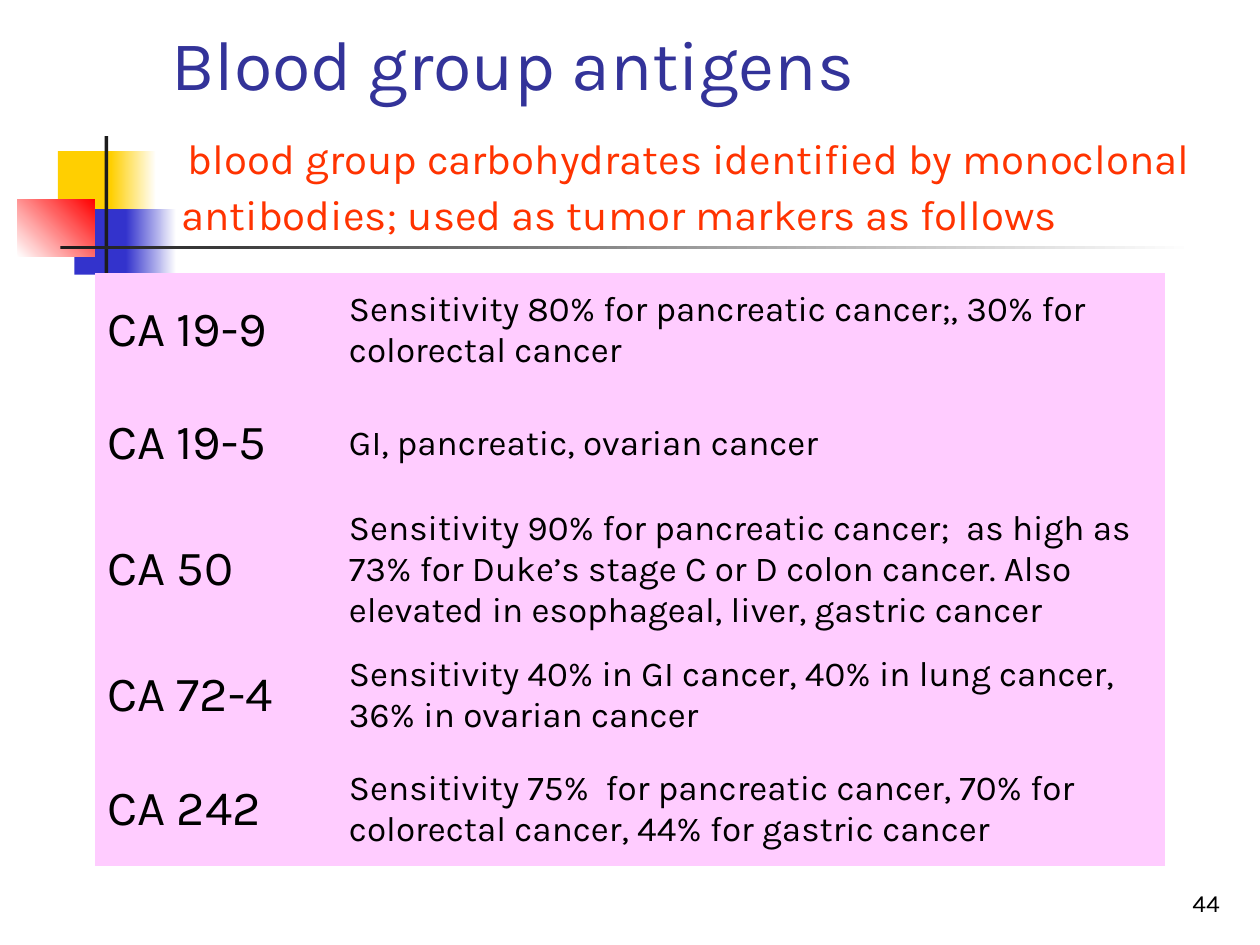
from pptx import Presentation
from pptx.dml.color import RGBColor
from pptx.enum.shapes import MSO_SHAPE as Shape
from pptx.enum.text import MSO_ANCHOR as Anchor, MSO_AUTO_SIZE as AutoSize, PP_ALIGN as Align
from pptx.oxml.ns import qn
from pptx.util import Inches, Pt

FONT = "Karla"
WHITE = RGBColor(0xFF, 0xFF, 0xFF)
BLACK = RGBColor(0, 0, 0)
CHARCOAL = RGBColor(0x1C, 0x1C, 0x1C)
YELLOW = RGBColor(0xFF, 0xCF, 0x01)
BLUE = RGBColor(0x33, 0x33, 0xCC)
RED = RGBColor(0xFF, 0, 0)
INDIGO = RGBColor(0x33, 0x33, 0x99)
ORANGE = RGBColor(0xFF, 0x33, 0)
PINK = RGBColor(0xFF, 0xCC, 0xFF)

NO_STYLE = "{2D5ABB26-0587-4C30-8999-92F81FD0307C}"
COLUMN_WIDTHS = (1.92, 6.58)
ROW_HEIGHT = 0.9
MARKERS = [
    ("CA 19-9", "Sensitivity 80% for pancreatic cancer;, 30% for colorectal cancer"),
    ("CA 19-5", "GI, pancreatic, ovarian cancer"),
    ("CA 50", "Sensitivity 90% for pancreatic cancer;  as high as 73% for Duke’s stage C or D "
              "colon cancer. Also elevated in esophageal, liver, gastric cancer"),
    ("CA 72-4", "Sensitivity 40% in GI cancer, 40% in lung cancer, 36% in ovarian cancer"),
    ("CA 242", "Sensitivity 75%  for pancreatic cancer, 70% for colorectal cancer, "
               "44% for gastric cancer"),
]
DECORATIONS = [
    ((0.46, 1.2, 0.48, 0.52), YELLOW, None, 0),
    ((0.88, 1.2, 0.36, 0.52), YELLOW, WHITE, 0),
    ((0.59, 1.66, 0.46, 0.52), BLUE, None, 0),
    ((1, 1.66, 0.4, 0.52), BLUE, WHITE, 0),
    ((0.14, 1.58, 0.61, 0.46), WHITE, RED, 45),
    ((0.83, 1.08, 0.03, 1.15), CHARCOAL, None, 0),
    ((0.48, 1.95, 9, 0.03), CHARCOAL, WHITE, 0),
]


def style_font(font, size, color):
    font.name = FONT
    font.size = Pt(size)
    font.color.rgb = color


def add_decoration(slide, box, start, end, angle):
    shape = slide.shapes.add_shape(Shape.RECTANGLE, *map(Inches, box))
    shape.shadow.inherit = False
    shape.line.fill.background()
    if end is None:
        shape.fill.solid()
        shape.fill.fore_color.rgb = start
        return
    shape.fill.gradient()
    shape.fill.gradient_angle = angle
    for stop, position, color in zip(shape.fill.gradient_stops, (0, 1), (start, end)):
        stop.position = position
        stop.color.rgb = color


def add_run(paragraph, text, size, color):
    run = paragraph.add_run()
    run.text = text
    style_font(run.font, size, color)


def fill_title(slide):
    title = slide.shapes.title
    title.left, title.top, title.width, title.height = map(Inches, (1.26, 0.23, 8.52, 1.6))
    frame = title.text_frame
    frame.auto_size = AutoSize.NONE
    frame.vertical_anchor = Anchor.MIDDLE
    paragraph = frame.paragraphs[0]
    paragraph.alignment = Align.LEFT
    add_run(paragraph, "Blood group antigens", 40, INDIGO)
    paragraph.add_line_break()
    add_run(paragraph, " ", 40, INDIGO)
    add_run(paragraph, "blood group carbohydrates identified by monoclonal  ", 24, ORANGE)
    paragraph.add_line_break()
    add_run(paragraph, " antibodies; used as tumor markers as follows", 24, ORANGE)


def fill_cell(cell, text, size):
    cell.fill.solid()
    cell.fill.fore_color.rgb = PINK
    cell.vertical_anchor = Anchor.MIDDLE
    cell.text = text
    style_font(cell.text_frame.paragraphs[0].font, size, BLACK)


def add_marker_table(slide):
    frame = slide.shapes.add_table(
        len(MARKERS), len(COLUMN_WIDTHS), Inches(0.75), Inches(2.17),
        Inches(sum(COLUMN_WIDTHS)), Inches(ROW_HEIGHT * len(MARKERS)))
    table = frame.table
    table.first_row = False
    table.horz_banding = False
    table._tbl.tblPr.find(qn("a:tableStyleId")).text = NO_STYLE
    for column, width in zip(table.columns, COLUMN_WIDTHS):
        column.width = Inches(width)
    for row, (marker, use) in zip(table.rows, MARKERS):
        row.height = Inches(ROW_HEIGHT)
        fill_cell(row.cells[0], marker, 28)
        fill_cell(row.cells[1], use, 20)


def add_page_number(slide):
    frame = slide.shapes.add_textbox(*map(Inches, (7.7, 6.83, 2.08, 0.5))).text_frame
    frame.word_wrap = True
    frame.vertical_anchor = Anchor.BOTTOM
    paragraph = frame.paragraphs[0]
    paragraph.text = "44"
    paragraph.alignment = Align.RIGHT
    style_font(paragraph.font, 14, BLACK)


def main():
    presentation = Presentation()
    presentation.slide_width = Inches(10)
    presentation.slide_height = Inches(7.5)
    slide = presentation.slides.add_slide(presentation.slide_layouts[5])
    for decoration in DECORATIONS:
        add_decoration(slide, *decoration)
    add_page_number(slide)
    fill_title(slide)
    add_marker_table(slide)
    presentation.save("out.pptx")


if __name__ == "__main__":
    main()
